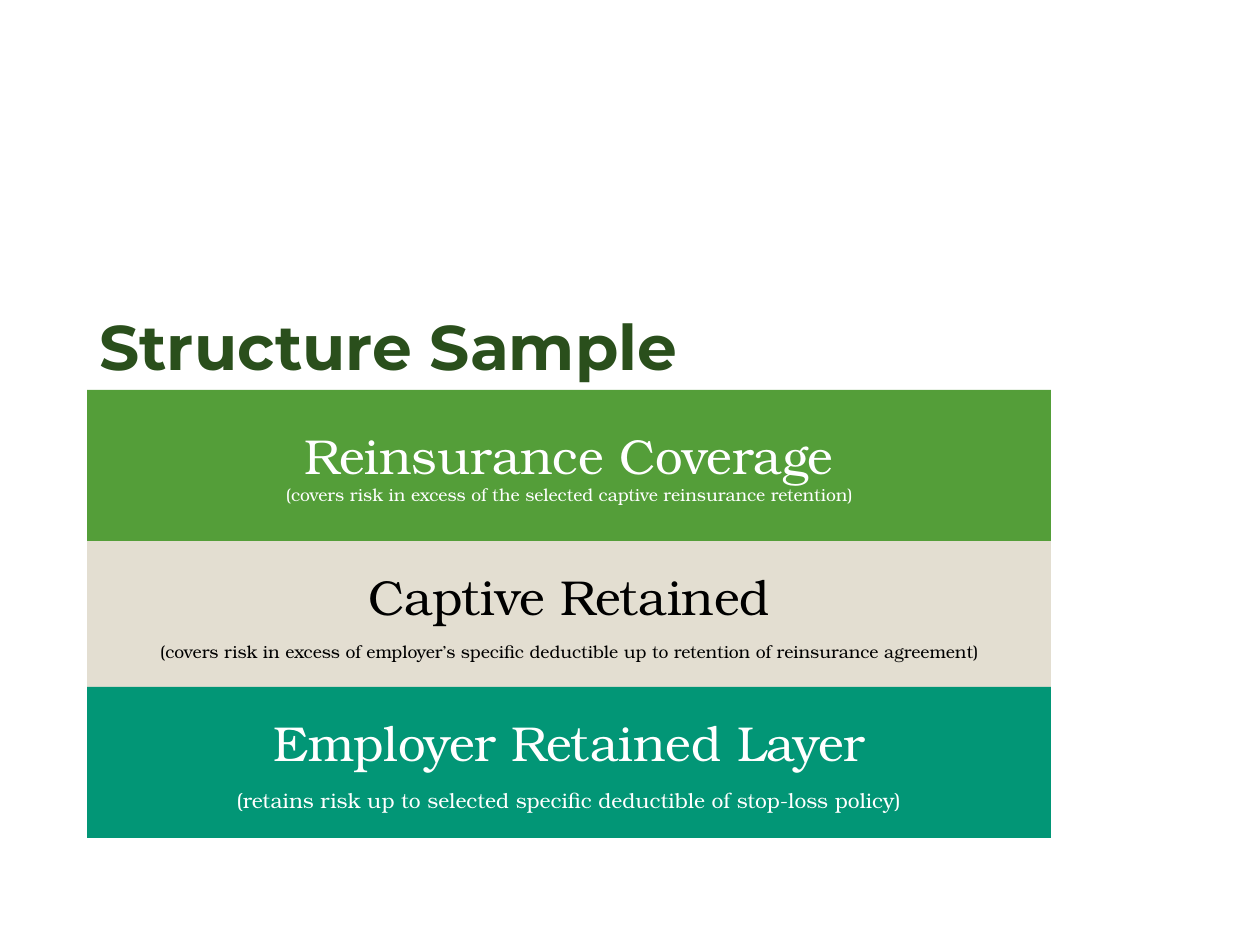
"""Build the captive insurance structure slide."""
import pptx
import pptx.dml.color
import pptx.enum.shapes
import pptx.enum.text
import pptx.util

EMU_PER_PX = 914400 / 126
LEFT = 87
COLORS = {
    "title": "2A4F1C",
    "green": "549E39",
    "sand": "E3DED1",
    "teal": "029676",
    "white": "FFFFFF",
    "black": "000000",
}
BANDS_TOP = 390
BANDS_WIDTH = 964
BANDS = [
    (151, "green", "white", "Reinsurance Coverage",
     "(covers risk in excess of the selected captive reinsurance retention)", 10, 0),
    (146, "sand", "black", "Captive Retained",
     "(covers risk in excess of employer’s specific deductible up to retention "
     "of reinsurance agreement)", 10, 9),
    (151, "teal", "white", "Employer Retained Layer",
     "(retains risk up to selected specific deductible of stop-loss policy)", 12, 9),
]


def px(*lengths):
    """Turn pixel lengths into EMU."""
    return [pptx.util.Emu(round(length * EMU_PER_PX)) for length in lengths]


def rgb(name):
    """Look up a named colour."""
    return pptx.dml.color.RGBColor.from_string(COLORS[name])


def write(para, text, font, size, color):
    """Put text in a paragraph and set its font."""
    para.text = text
    para.font.name = font
    para.font.size = pptx.util.Pt(size)
    para.font.color.rgb = rgb(color)


def add_title(page, text):
    """Add the bold slide title."""
    box = page.shapes.add_textbox(*px(LEFT, 310, 1086, 79))
    box.text_frame.word_wrap = True
    para = box.text_frame.paragraphs[0]
    write(para, text, "Montserrat", 36, "title")
    para.font.bold = True
    para.line_spacing = 0.9


def add_band(page, top, height, fill, color, heading, detail, detail_size, gap):
    """Add one coverage layer with its heading and detail line."""
    band = page.shapes.add_shape(
        pptx.enum.shapes.MSO_SHAPE.RECTANGLE, *px(LEFT, top, BANDS_WIDTH, height))
    band.shadow.inherit = False
    band.fill.solid()
    band.fill.fore_color.rgb = rgb(fill)
    band.line.fill.background()
    frame = band.text_frame
    frame.word_wrap = True
    frame.vertical_anchor = pptx.enum.text.MSO_ANCHOR.MIDDLE
    heading_para, detail_para = frame.paragraphs[0], frame.add_paragraph()
    write(heading_para, heading, "TeX Gyre Bonum", 28, color)
    write(detail_para, detail, "TeX Gyre Bonum", detail_size, color)
    detail_para.space_before = pptx.util.Pt(gap)
    for para in frame.paragraphs:
        para.alignment = pptx.enum.text.PP_ALIGN.CENTER


def main():
    """Build and save the deck."""
    deck = pptx.Presentation()
    deck.slide_width, deck.slide_height = px(1260, 945)
    page = deck.slides.add_slide(deck.slide_layouts[6])
    add_title(page, "Structure Sample")
    top = BANDS_TOP
    for height, *content in BANDS:
        add_band(page, top, height, *content)
        top += height
    deck.save("out.pptx")


if __name__ == "__main__":
    main()
